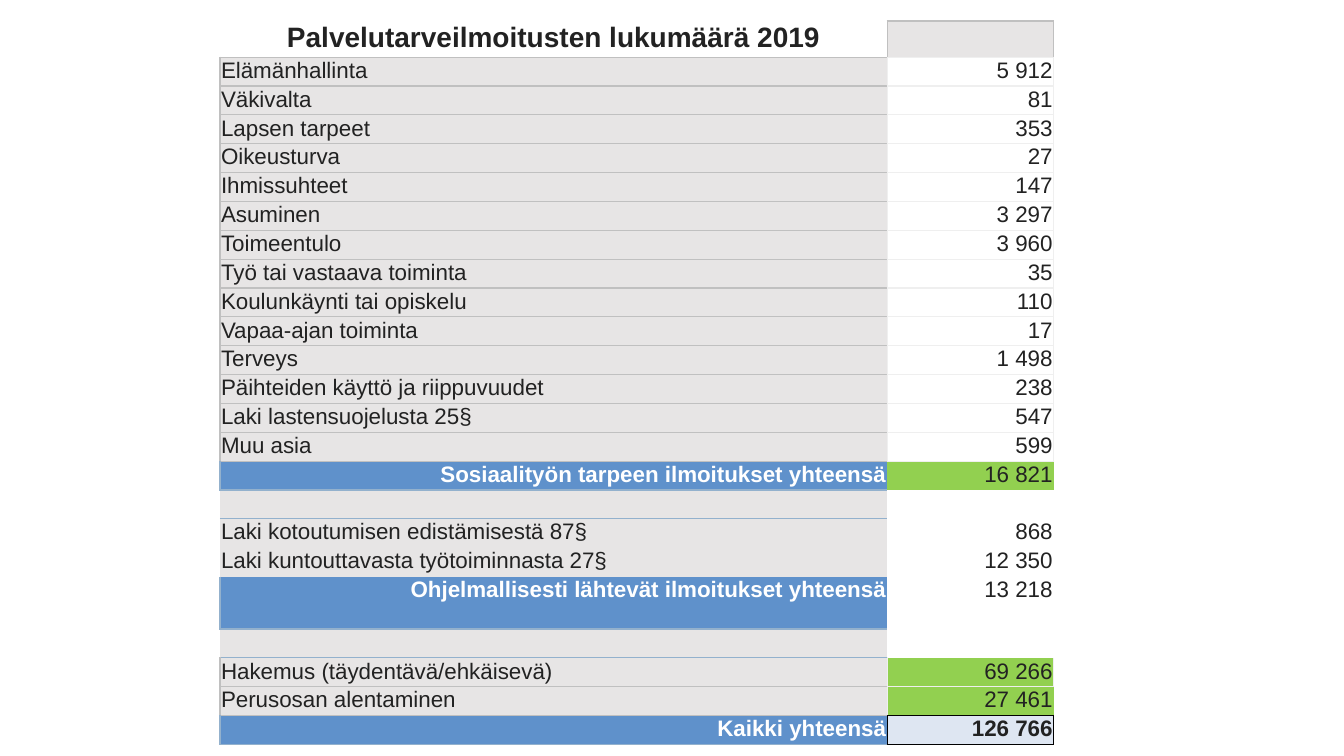
from lxml.etree import SubElement
from pptx import Presentation
from pptx.dml.color import RGBColor
from pptx.enum.text import PP_ALIGN
from pptx.oxml.ns import qn
from pptx.util import Pt

SCALE = 12192000 / 2560
INK = RGBColor(0x22, 0x22, 0x22)
WHITE = RGBColor(0xFF, 0xFF, 0xFF)
BLACK = RGBColor(0x00, 0x00, 0x00)
GREY = RGBColor(0xE7, 0xE5, 0xE5)
SILVER = RGBColor(0xC0, 0xC0, 0xC0)
MIST = RGBColor(0xEF, 0xEF, 0xEF)
BLUE = RGBColor(0x5F, 0x91, 0xCB)
STEEL = RGBColor(0x93, 0xB1, 0xCD)
GREEN = RGBColor(0x92, 0xD0, 0x50)
PALE = RGBColor(0xDE, 0xE6, 0xF2)
NO_STYLE = "{2D5ABB26-0587-4C30-8999-92F81FD0307C}"
ROW_H, HEADER_H, TALL_H = 55, 69, 100
COL_W = (1271, 317)
MARGINS = {"margin_left": 2, "margin_right": 2, "margin_top": 2, "margin_bottom": 0}


def px(n):
    """Turn px into EMU."""
    return int(n * SCALE)


def box(color):
    """Return the same edge colour for all four sides."""
    return dict.fromkeys("LRTB", color)


def style(fill=None, edges=None, align=PP_ALIGN.LEFT, **font):
    """Return the format of one cell."""
    base = {"name": "Arial", "size": Pt(16), "bold": False, "color": INK}
    return {"fill": fill, "edges": edges or {}, "align": align, "font": base | font}


def number(fill=None, edges=None, **font):
    """Return the format of a right-aligned cell."""
    return style(fill, edges, PP_ALIGN.RIGHT, **font)


def total(**edges):
    """Return the format of a blue total label."""
    return number(BLUE, {"L": STEEL, "B": STEEL} | edges, bold=True, color=WHITE)


KINDS = {
    "header": (style(None, box(SILVER) | {"R": SILVER}, PP_ALIGN.CENTER, size=Pt(20), bold=True)
               | {"edges": {"R": SILVER, "B": SILVER}}, style(GREY, box(SILVER))),
    "item": (style(GREY, box(SILVER) | {"R": MIST}), number(None, box(MIST))),
    "last item": (style(GREY, box(SILVER) | {"R": MIST}),
                  number(None, {"L": MIST, "T": MIST, "R": MIST})),
    "subtotal": (total(T=SILVER), number(GREEN)),
    "gap": (style(GREY, {"T": STEEL}), style()),
    "plain": (style(GREY), number()),
    "tall subtotal": (total(), number()),
    "application": (style(GREY, {"L": SILVER, "R": MIST, "B": SILVER}),
                    number(GREEN, {"L": MIST, "R": MIST, "B": MIST})),
    "reduction": (style(GREY, {"L": SILVER, "T": SILVER, "R": MIST, "B": SILVER}),
                  number(GREEN, {"T": MIST, "B": BLACK})),
    "grand total": (total(R=BLACK), number(PALE, box(BLACK), bold=True)),
}
KINDS["header"] = (style(None, {"R": SILVER, "B": SILVER}, PP_ALIGN.CENTER, size=Pt(20), bold=True),
                   style(GREY, box(SILVER)))

ROWS = [
    ("header", "Palvelutarveilmoitusten lukumäärä 2019", ""),
    ("item", "Elämänhallinta", "5 912"),
    ("item", "Väkivalta", "81"),
    ("item", "Lapsen tarpeet", "353"),
    ("item", "Oikeusturva", "27"),
    ("item", "Ihmissuhteet", "147"),
    ("item", "Asuminen", "3 297"),
    ("item", "Toimeentulo", "3 960"),
    ("item", "Työ tai vastaava toiminta", "35"),
    ("item", "Koulunkäynti tai opiskelu", "110"),
    ("item", "Vapaa-ajan toiminta", "17"),
    ("item", "Terveys", "1 498"),
    ("item", "Päihteiden käyttö ja riippuvuudet", "238"),
    ("item", "Laki lastensuojelusta 25§", "547"),
    ("last item", "Muu asia", "599"),
    ("subtotal", "Sosiaalityön tarpeen ilmoitukset yhteensä", "16 821"),
    ("gap", "", ""),
    ("plain", "Laki kotoutumisen edistämisestä 87§", "868"),
    ("plain", "Laki kuntouttavasta työtoiminnasta 27§", "12 350"),
    ("tall subtotal", "Ohjelmallisesti lähtevät ilmoitukset yhteensä", "13 218"),
    ("gap", "", ""),
    ("application", "Hakemus (täydentävä/ehkäisevä)", "69 266"),
    ("reduction", "Perusosan alentaminen", "27 461"),
    ("grand total", "Kaikki yhteensä", "126 766"),
]


def set_edges(cell, edges):
    """Draw the given sides of a cell as one-point lines."""
    tcPr = cell._tc.get_or_add_tcPr()
    lines = []
    for side in "LRTB":
        if side in edges:
            ln = SubElement(tcPr, qn(f"a:ln{side}"), w=str(Pt(1)))
            fill = SubElement(ln, qn("a:solidFill"))
            SubElement(fill, qn("a:srgbClr"), val=str(edges[side]))
            lines.append(ln)
    for i, ln in enumerate(lines):
        tcPr.insert(i, ln)


def fill_cell(cell, text, fmt):
    """Write and format one cell."""
    for name, value in MARGINS.items():
        setattr(cell, name, px(value))
    if fmt["fill"] is None:
        cell.fill.background()
    else:
        cell.fill.solid()
        cell.fill.fore_color.rgb = fmt["fill"]
    set_edges(cell, fmt["edges"])
    p = cell.text_frame.paragraphs[0]
    p.alignment = fmt["align"]
    if not text:
        SubElement(p._p, qn("a:endParaRPr"), sz="1600")
        return
    r = p.add_run()
    r.text = text
    for name, value in fmt["font"].items():
        if name == "color":
            r.font.color.rgb = value
        else:
            setattr(r.font, name, value)


def add_counts(s, x, y):
    """Place the table of notification counts at the given corner."""
    heights = {"header": HEADER_H, "tall subtotal": TALL_H}
    rows = [heights.get(kind, ROW_H) for kind, *_ in ROWS]
    frame = s.shapes.add_table(len(ROWS), len(COL_W), px(x), px(y), px(sum(COL_W)), px(sum(rows)))
    table = frame.table
    table.first_row = table.horz_banding = False
    table._tbl.tblPr.find(qn("a:tableStyleId")).text = NO_STYLE
    for col, w in zip(table.columns, COL_W):
        col.width = px(w)
    for row, h, (kind, *texts) in zip(table.rows, rows, ROWS):
        row.height = px(h)
        for cell, text, fmt in zip(row.cells, texts, KINDS[kind]):
            fill_cell(cell, text, fmt)


def main():
    """Build and save the slide."""
    prs = Presentation()
    prs.slide_width, prs.slide_height = px(2560), px(1440)
    s = prs.slides.add_slide(prs.slide_layouts[6])
    add_counts(s, 419, 40)
    prs.save("out.pptx")


if __name__ == "__main__":
    main()
